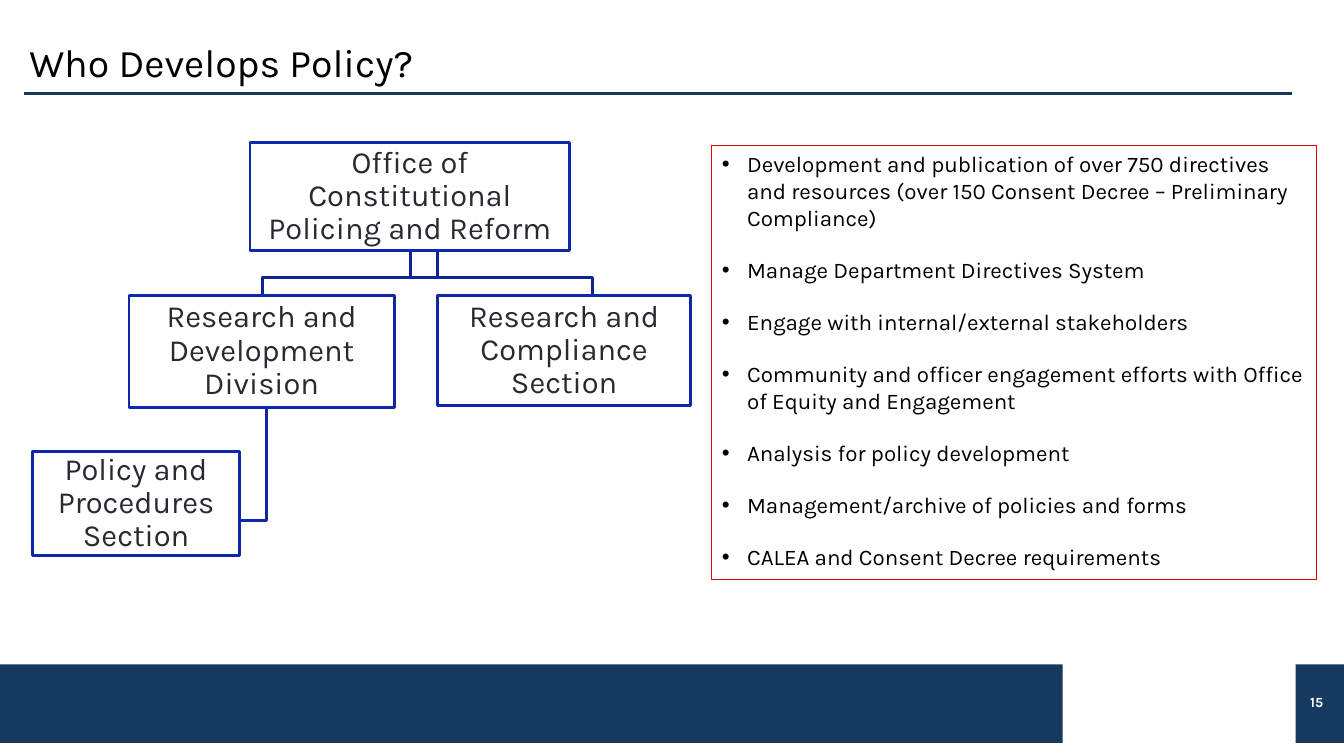
from lxml.etree import SubElement
from pptx import Presentation
from pptx.dml.color import RGBColor
from pptx.enum.shapes import MSO_CONNECTOR, MSO_SHAPE
from pptx.enum.text import MSO_ANCHOR, MSO_AUTO_SIZE, PP_ALIGN
from pptx.oxml.ns import qn
from pptx.util import Inches, Pt

FONT = "Karla"
NAVY = RGBColor(0x17, 0x38, 0x5F)
BOX_BLUE = RGBColor(0x10, 0x28, 0xA8)
LINK_BLUE = RGBColor(0x0E, 0x23, 0x94)
RED = RGBColor(0xE7, 0x00, 0x00)
BLACK = RGBColor(0x00, 0x00, 0x00)
CHARCOAL = RGBColor(0x29, 0x29, 0x34)
WHITE = RGBColor(0xFF, 0xFF, 0xFF)

BULLETS = [
    "Development and publication of over 750 directives and resources "
    "(over 150 Consent Decree – Preliminary Compliance)",
    "Manage Department Directives System",
    "Engage with internal/external stakeholders",
    "Community and officer engagement efforts with Office of Equity and Engagement",
    "Analysis for policy development",
    "Management/archive of policies and forms",
    "CALEA and Consent Decree requirements",
]

# Organisation units: name, left, top, width, height
UNITS = [
    ("Office of Constitutional Policing and Reform", 2.48, 1.41, 3.17, 1.08),
    ("Research and Development Division", 1.28, 2.93, 2.63, 1.11),
    ("Policy and Procedures Section", 0.32, 4.48, 2.06, 1.03),
    ("Research and Compliance Section", 4.34, 2.93, 2.51, 1.09),
]

# Elbow links between the units: colour, points
LINKS = [
    (LINK_BLUE, [(4.07, 2.5), (4.07, 2.75), (5.88, 2.75), (5.88, 2.93)]),
    (BOX_BLUE, [(2.64, 4.04), (2.64, 5.16), (2.38, 5.16)]),
    (LINK_BLUE, [(4.34, 2.5), (4.34, 2.75), (2.6, 2.75), (2.6, 2.93)]),
]


class SlideBuilder:
    def __init__(self, slide):
        self.slide = slide
        self.shapes = slide.shapes

    def place(self, sp, left, top, width, height):
        sp.left, sp.top = Inches(left), Inches(top)
        sp.width, sp.height = Inches(width), Inches(height)

    def style(self, p, size, color, align=PP_ALIGN.LEFT, bold=False):
        p.alignment = align
        for r in p.runs:
            r.font.name, r.font.size, r.font.bold = FONT, Pt(size), bold
            r.font.color.rgb = color

    def title(self, text, *frame):
        sp = self.shapes.title
        self.place(sp, *frame)
        tf = sp.text_frame
        tf.text = text
        tf.auto_size = MSO_AUTO_SIZE.NONE
        tf.vertical_anchor = MSO_ANCHOR.MIDDLE
        self.style(tf.paragraphs[0], 28, BLACK)

    def bullets(self, items, *frame):
        sp = self.slide.placeholders[1]
        self.place(sp, *frame)
        sp.fill.solid()
        sp.fill.fore_color.rgb = WHITE
        sp.line.color.rgb = RED
        sp.line.width = Pt(0.75)
        tf = sp.text_frame
        tf.text = "\n".join(items)
        tf.auto_size = MSO_AUTO_SIZE.NONE
        for p in tf.paragraphs:
            p.space_before, p.space_after = Pt(0), Pt(18)
            pPr = p._p.get_or_add_pPr()
            pPr.set("marL", str(Inches(0.25)))
            pPr.set("indent", str(Inches(-0.25)))
            SubElement(pPr, qn("a:buFont")).set("typeface", "Arial")
            SubElement(pPr, qn("a:buChar")).set("char", "•")
            self.style(p, 16, BLACK)

    def rect(self, frame, fill, line=None):
        sp = self.shapes.add_shape(MSO_SHAPE.RECTANGLE, *map(Inches, frame))
        sp.shadow.inherit = False
        sp.fill.solid()
        sp.fill.fore_color.rgb = fill
        if line is None:
            sp.line.fill.background()
        else:
            sp.line.color.rgb = line
            sp.line.width = Pt(2.08)
        return sp

    def unit(self, name, *frame):
        tf = self.rect(frame, WHITE, BOX_BLUE).text_frame
        tf.word_wrap = True
        tf.vertical_anchor = MSO_ANCHOR.MIDDLE
        tf.margin_left = tf.margin_right = Inches(0.02)
        tf.margin_top = tf.margin_bottom = Inches(0.02)
        tf.text = name
        p = tf.paragraphs[0]
        p.line_spacing = 0.9
        self.style(p, 22, CHARCOAL, PP_ALIGN.CENTER)

    def link(self, color, points):
        start, *rest = [(Inches(x), Inches(y)) for x, y in points]
        builder = self.shapes.build_freeform(*start)
        builder.add_line_segments(rest, close=False)
        sp = builder.convert_to_shape()
        sp.shadow.inherit = False
        sp.fill.background()
        sp.line.color.rgb = color
        sp.line.width = Pt(2.08)

    def rule(self, x1, x2, y):
        line = self.shapes.add_connector(
            MSO_CONNECTOR.STRAIGHT, Inches(x1), Inches(y), Inches(x2), Inches(y))
        line.line.color.rgb = NAVY
        line.line.width = Pt(2.25)
        SubElement(line._element.spPr, qn("a:effectLst"))

    def page_number(self, text, *frame):
        tf = self.shapes.add_textbox(*map(Inches, frame)).text_frame
        tf.word_wrap = True
        tf.vertical_anchor = MSO_ANCHOR.MIDDLE
        tf.text = text
        self.style(tf.paragraphs[0], 10, WHITE, PP_ALIGN.CENTER, bold=True)


def main():
    prs = Presentation()
    prs.slide_width, prs.slide_height = Inches(13.33), Inches(7.5)
    s = SlideBuilder(prs.slides.add_slide(prs.slide_layouts[1]))

    # Title and rule
    s.title("Who Develops Policy?", 0.19, 0.29, 12.34, 0.65)
    s.rule(0.24, 12.81, 0.93)

    # Footer band and page number
    s.rect((-0.01, 6.59, 10.55, 0.78), NAVY)
    s.rect((12.85, 6.59, 0.48, 0.78), NAVY)
    s.page_number("15", 12.78, 6.76, 0.56, 0.4)

    # Responsibilities
    s.bullets(BULLETS, 7.06, 1.44, 6, 4.31)

    # Organisation chart
    for color, points in LINKS:
        s.link(color, points)
    for unit in UNITS:
        s.unit(*unit)

    prs.save("out.pptx")


if __name__ == "__main__":
    main()
